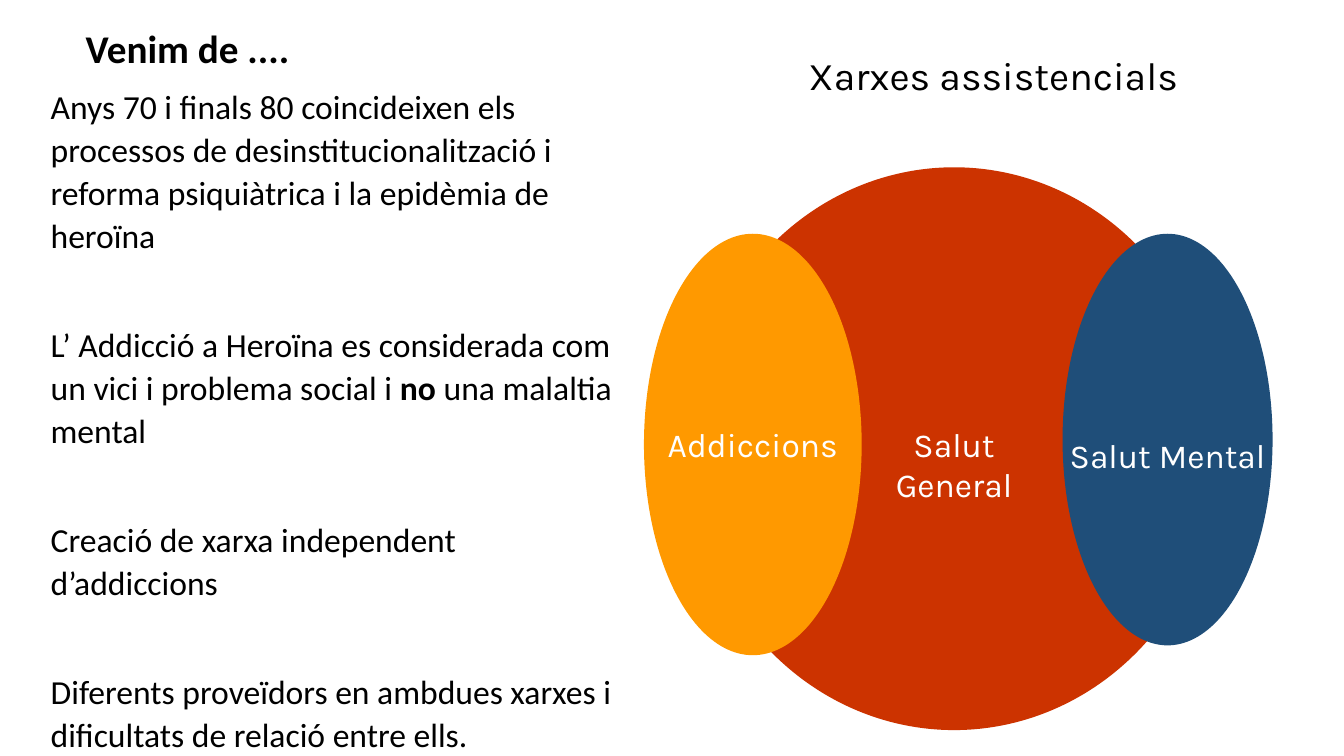
"""Build a slide on how the addiction, mental and general health networks arose."""
from lxml.etree import SubElement
from pptx import Presentation
from pptx.dml.color import RGBColor
from pptx.enum.shapes import MSO_SHAPE
from pptx.enum.text import MSO_ANCHOR, MSO_AUTO_SIZE, PP_ALIGN
from pptx.oxml.ns import qn
from pptx.util import Pt

BLACK = RGBColor(0x00, 0x00, 0x00)
WHITE = RGBColor(0xFF, 0xFF, 0xFF)
RED = RGBColor(0xCC, 0x33, 0x00)
BLUE = RGBColor(0x1F, 0x4E, 0x79)
ORANGE = RGBColor(0xFF, 0x99, 0x00)

HISTORY = [
    [("Anys 70 i finals 80 coincideixen els processos de desinstitucionalització "
      "i reforma psiquiàtrica i la epidèmia de heroïna", False)],
    [("L’ Addicció a Heroïna es considerada com un vici i problema social i ", False),
     ("no", True),
     (" una malaltia mental", False)],
    [("Creació de xarxa independent d’addiccions", False)],
    [("Diferents proveïdors en ambdues xarxes i dificultats de relació entre ells.", False)],
]

NETWORKS = [
    (["Salut", "General"], RED, (492.5, 119.5, 378, 402), 22),
    (["Salut Mental"], BLUE, (759, 167, 150, 294), 22),
    (["Addiccions"], ORANGE, (460, 167, 155.5, 301), 0),
]


def place(shape, box):
    shape.left, shape.top, shape.width, shape.height = (Pt(length) for length in box)


def add_run(paragraph, text, font, size, color, bold=False):
    run = paragraph.add_run()
    run.text = text
    run.font.name = font
    run.font.size = Pt(size)
    run.font.bold = bold
    run.font.color.rgb = color


def next_paragraph(frame, index):
    return frame.add_paragraph() if index else frame.paragraphs[0]


def fill_heading(heading):
    place(heading, (54, 13.5, 162, 41))
    frame = heading.text_frame
    frame.word_wrap = False
    frame.auto_size = MSO_AUTO_SIZE.NONE
    frame.vertical_anchor = MSO_ANCHOR.TOP
    frame.paragraphs[0].alignment = PP_ALIGN.LEFT
    add_run(frame.paragraphs[0], "Venim de ....", "Calibri", 28, BLACK, bold=True)


def fill_history(history):
    place(history, (29, 55.5, 425.5, 484.5))
    frame = history.text_frame
    frame.word_wrap = True
    frame.auto_size = MSO_AUTO_SIZE.NONE
    frame.vertical_anchor = MSO_ANCHOR.TOP
    for index, passages in enumerate(HISTORY):
        paragraph = next_paragraph(frame, index)
        paragraph.line_spacing = 1.07
        paragraph.space_before = Pt(0)
        paragraph.space_after = Pt(47)
        properties = paragraph._p.get_or_add_pPr()
        properties.set("marL", "0")
        properties.set("indent", "0")
        SubElement(properties, qn("a:buNone"))
        for text, bold in passages:
            add_run(paragraph, text, "Calibri", 24, BLACK, bold)


def add_network(slide, lines, color, box, drop):
    ellipse = slide.shapes.add_shape(MSO_SHAPE.OVAL, *(Pt(length) for length in box))
    ellipse.shadow.inherit = False
    ellipse.fill.solid()
    ellipse.fill.fore_color.rgb = color
    ellipse.line.fill.background()
    frame = ellipse.text_frame
    frame.word_wrap = False
    frame.vertical_anchor = MSO_ANCHOR.MIDDLE
    frame.margin_top = Pt(3.6 + drop)
    for index, line in enumerate(lines):
        paragraph = next_paragraph(frame, index)
        paragraph.alignment = PP_ALIGN.CENTER
        add_run(paragraph, line, "Karla", 24, WHITE)


def add_caption(slide):
    caption = slide.shapes.add_textbox(Pt(565), Pt(33), Pt(289), Pt(40))
    frame = caption.text_frame
    frame.word_wrap = True
    frame.paragraphs[0].alignment = PP_ALIGN.CENTER
    add_run(frame.paragraphs[0], "Xarxes assistencials", "Karla", 28, BLACK)


def main():
    deck = Presentation()
    deck.slide_width, deck.slide_height = Pt(960), Pt(540)
    slide = deck.slides.add_slide(deck.slide_layouts[1])
    fill_heading(slide.shapes.title)
    fill_history(slide.placeholders[1])
    for network in NETWORKS:
        add_network(slide, *network)
    add_caption(slide)
    deck.save("out.pptx")


if __name__ == "__main__":
    main()
